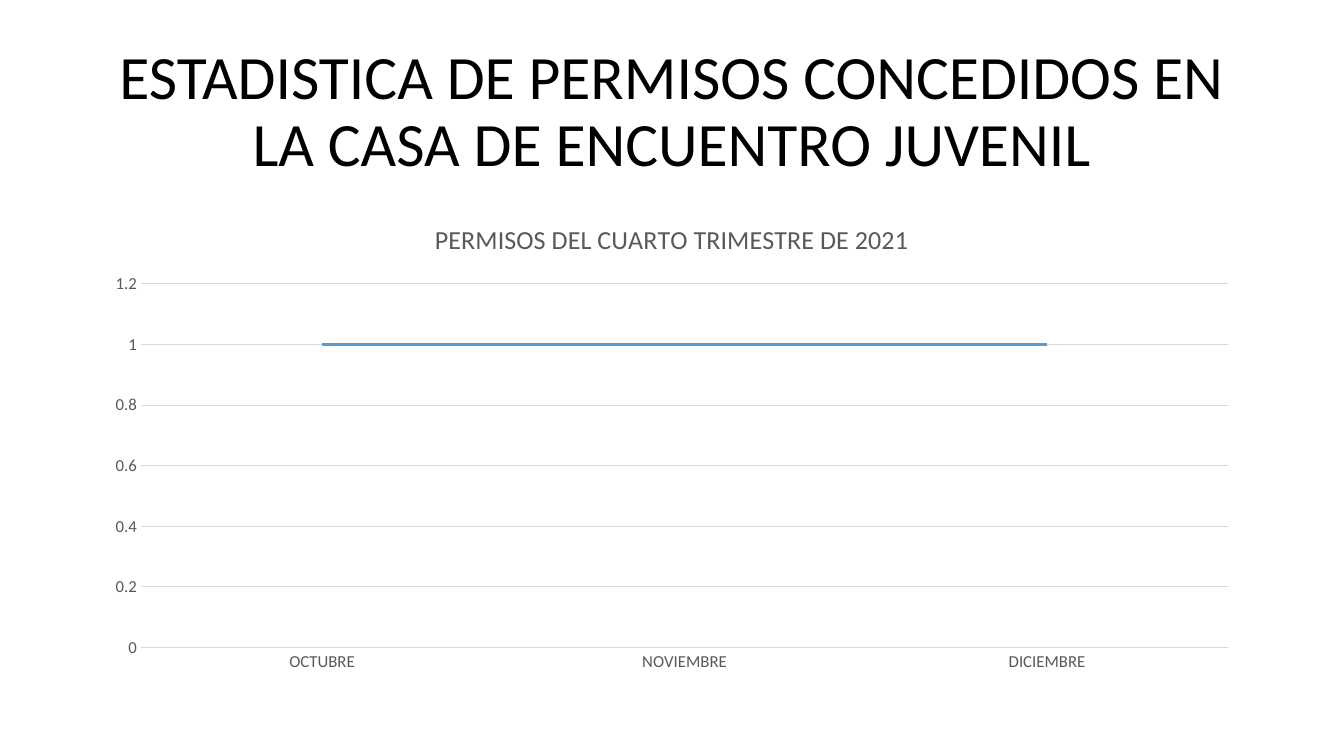
from dataclasses import dataclass

from pptx import Presentation
from pptx.chart.data import CategoryChartData
from pptx.dml.color import RGBColor
from pptx.enum import chart as ch, text
from pptx.util import Cm, Pt

FONT = "Calibri"
BLACK = RGBColor(0x00, 0x00, 0x00)
GRAY = RGBColor(0x59, 0x59, 0x59)
GRID = RGBColor(0xD9, 0xD9, 0xD9)
BLUE = RGBColor(0x5B, 0x9B, 0xD5)
LEFT, WIDTH = Cm(2.33), Cm(29.21)
CHART_TITLE = "PERMISOS DEL CUARTO TRIMESTRE DE 2021"


@dataclass
class AxisStyle:
    has_line: bool
    has_grid: bool


def style_font(font, size: float, color: RGBColor) -> None:
    font.name = FONT
    font.size = Pt(size)
    font.bold = False
    font.color.rgb = color


def style_line(line, width: float, color: RGBColor) -> None:
    line.width = Pt(width)
    line.color.rgb = color


def style_axis(axis, style: AxisStyle) -> None:
    axis.major_tick_mark = axis.minor_tick_mark = ch.XL_TICK_MARK.NONE
    style_font(axis.tick_labels.font, 12, GRAY)
    axis.has_major_gridlines = style.has_grid
    if style.has_grid:
        style_line(axis.major_gridlines.format.line, 0.75, GRID)
    if style.has_line:
        style_line(axis.format.line, 0.75, GRID)
    else:
        axis.format.line.fill.background()


def add_title(s) -> None:
    sp = s.shapes.title
    sp.left, sp.top, sp.width, sp.height = LEFT, Cm(1.01), WIDTH, Cm(3.68)
    tf = sp.text_frame
    tf.word_wrap = True
    tf.vertical_anchor = text.MSO_ANCHOR.MIDDLE
    p = tf.paragraphs[0]
    p.text = "ESTADISTICA DE PERMISOS CONCEDIDOS EN LA CASA DE ENCUENTRO JUVENIL"
    p.alignment = text.PP_ALIGN.CENTER
    p.line_spacing = 0.9
    style_font(p.font, 44, BLACK)


def add_permits_chart(s) -> None:
    data = CategoryChartData()
    data.categories = ["OCTUBRE", "NOVIEMBRE", "DICIEMBRE"]
    data.add_series(CHART_TITLE, (1, 1, 1))
    chart = s.shapes.add_chart(
        ch.XL_CHART_TYPE.LINE, LEFT, Cm(5.07), WIDTH, Cm(12.09), data).chart
    style_font(chart.font, 10, BLACK)
    chart.has_legend = False

    # Chart title
    chart.has_title = True
    p = chart.chart_title.text_frame.paragraphs[0]
    p.text = CHART_TITLE
    style_font(p.font, 18.6, GRAY)
    chart.chart_title.include_in_layout = False

    # Axes
    style_axis(chart.category_axis, AxisStyle(has_line=True, has_grid=False))
    style_axis(chart.value_axis, AxisStyle(has_line=False, has_grid=True))
    chart.value_axis.minimum_scale = 0
    chart.value_axis.maximum_scale = 1.2
    chart.value_axis.major_unit = 0.2

    # Series
    chart.plots[0].vary_by_categories = False
    permits = chart.plots[0].series[0]
    permits.smooth = False
    permits.marker.style = ch.XL_MARKER_STYLE.NONE
    style_line(permits.format.line, 2.25, BLUE)


def main() -> None:
    prs = Presentation()
    prs.slide_width, prs.slide_height = Cm(33.87), Cm(19.05)
    s = prs.slides.add_slide(prs.slide_layouts[5])
    add_title(s)
    add_permits_chart(s)
    prs.save("out.pptx")


if __name__ == "__main__":
    main()
